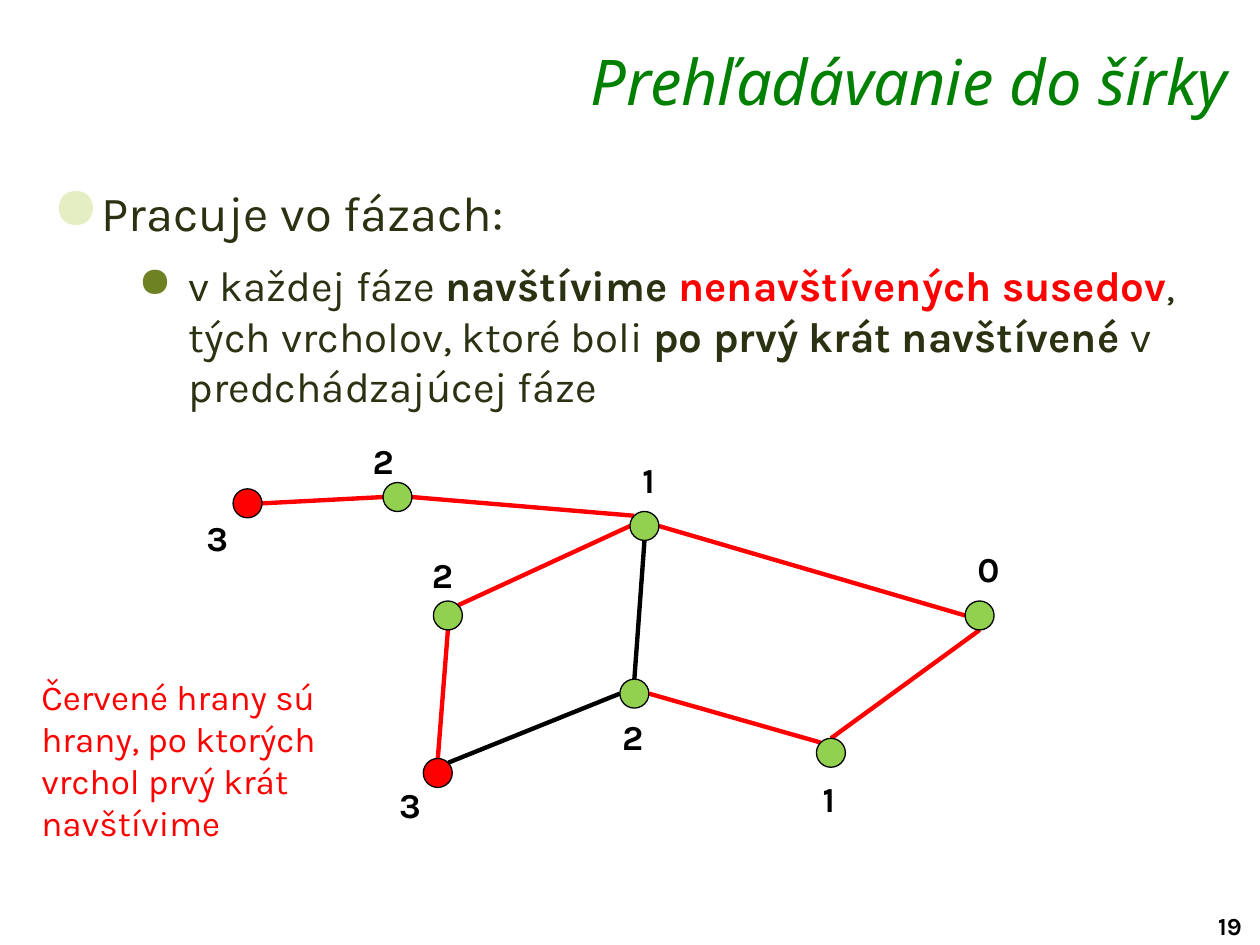
from math import sqrt

from lxml import etree
from pptx import Presentation
from pptx.dml.color import RGBColor
from pptx.enum.shapes import MSO_CONNECTOR, MSO_SHAPE
from pptx.enum.text import MSO_ANCHOR, MSO_AUTO_SIZE, PP_ALIGN
from pptx.oxml.ns import qn
from pptx.util import Inches, Pt

BLACK, RED, GREEN = "000000", "FF0000", "92D050"
TITLE_GREEN, OLIVE = "008000", "2B3212"
NODE = 0.23  # node diameter

# Unit offsets from a node's centre to a point on its rim
D = sqrt(0.5)
RIM = {"top": (0, -1), "bottom": (0, 1), "left": (-1, 0), "right": (1, 0),
       "top left": (-D, -D), "top right": (D, -D)}

# Node name: left, top, fill, label, label left, label top, label wraps
NODES = {
    "start": (7.66, 4.77, GREEN, "0", 7.66, 4.30, False),
    "hub": (5.00, 4.06, GREEN, "1", 5.00, 3.59, False),
    "south": (6.48, 5.86, GREEN, "1", 6.43, 6.12, True),
    "centre": (4.92, 5.39, GREEN, "2", 4.84, 5.63, True),
    "west": (3.44, 4.77, GREEN, "2", 3.33, 4.34, False),
    "north": (3.04, 3.83, GREEN, "2", 2.86, 3.44, False),
    "south west": (3.36, 6.02, RED, "3", 3.07, 6.17, False),
    "north west": (1.85, 3.88, RED, "3", 1.54, 4.05, False),
}

# From node, rim point, to node, rim point, colour
EDGES = [
    ("west", "top right", "hub", "left", RED),
    ("hub", "right", "start", "left", RED),
    ("centre", "top", "hub", "bottom", BLACK),
    ("south", "top", "start", "bottom", RED),
    ("centre", "right", "south", "top left", RED),
    ("south west", "top", "west", "bottom", RED),
    ("south west", "top right", "centre", "left", BLACK),
    ("north", "right", "hub", "top left", RED),
    ("north west", "right", "north", "left", RED),
]


def rgb(value):
    return RGBColor.from_string(value)


def add_run(p, text, size=20, color=BLACK, font="Karla", bold=False, italic=False):
    r = p.add_run()
    r.text = text
    r.font.name = font
    r.font.size = Pt(size)
    r.font.bold = bold
    r.font.italic = italic
    r.font.color.rgb = rgb(color)
    return r


def text_frame(slide, box, wrap=True, grow=True):
    tf = slide.shapes.add_textbox(*map(Inches, box)).text_frame
    tf.word_wrap = wrap
    tf.auto_size = MSO_AUTO_SIZE.SHAPE_TO_FIT_TEXT if grow else MSO_AUTO_SIZE.NONE
    tf.vertical_anchor = MSO_ANCHOR.TOP
    return tf


def add_text(slide, box, text, wrap=True, grow=True, align=PP_ALIGN.LEFT, **fmt):
    tf = text_frame(slide, box, wrap, grow)
    p = tf.paragraphs[0]
    p.alignment = align
    add_run(p, text, **fmt)
    return tf


def set_bullet(p, color, percent, margin, hanging):
    pPr = p._p.get_or_add_pPr()
    pPr.set("marL", str(Inches(margin)))
    pPr.set("indent", str(-Inches(hanging)))
    clr = etree.SubElement(pPr, qn("a:buClr"))
    etree.SubElement(clr, qn("a:srgbClr"), val=color)
    etree.SubElement(pPr, qn("a:buSzPct"), val=str(percent * 1000))
    etree.SubElement(pPr, qn("a:buChar"), char="●")


def add_title(slide, box):
    tf = add_text(slide, box, "Prehľadávanie do šírky", grow=False,
                  align=PP_ALIGN.RIGHT, size=36, color=TITLE_GREEN,
                  font="Noto Sans", italic=True)
    tf.margin_top = Inches(0.03)


def add_body(slide, box):
    tf = text_frame(slide, box, grow=False)
    p = tf.paragraphs[0]
    set_bullet(p, "E5EEC2", 120, 0.39, 0.39)
    p.space_after = Pt(5.6)
    add_run(p, "Pracuje vo fázach:", size=28, color=OLIVE)

    p = tf.add_paragraph()
    p.level = 1
    set_bullet(p, "6E8224", 100, 1.08, 0.4)
    p.space_before = p.space_after = Pt(4.8)
    for text, bold, color in [
        ("v každej fáze ", False, OLIVE),
        ("navštívime ", True, OLIVE),
        ("nenavštívených susedov", True, RED),
        (", tých vrcholov, ktoré boli ", False, OLIVE),
        ("po prvý krát navštívené ", True, OLIVE),
        ("v predchádzajúcej fáze", False, OLIVE),
    ]:
        add_run(p, text, size=24, color=color, bold=bold)


def add_edge(slide, start, end, color):
    line = slide.shapes.add_connector(MSO_CONNECTOR.STRAIGHT,
                                      *map(Inches, start + end))
    line.line.color.rgb = rgb(color)
    line.line.width = Pt(2.5)
    etree.SubElement(line._element.spPr, qn("a:effectLst"))


def add_graph(slide, box):
    left, top = box[:2]

    def rim_point(name, side):
        x, y = NODES[name][:2]
        dx, dy = RIM[side]
        return (left + x + NODE / 2 * (1 + dx), top + y + NODE / 2 * (1 + dy))

    # Edges
    for a, side_a, b, side_b, color in EDGES:
        add_edge(slide, rim_point(a, side_a), rim_point(b, side_b), color)

    # Nodes with the number of the phase that reaches them
    for x, y, fill, label, label_x, label_y, wrap in NODES.values():
        sp = slide.shapes.add_shape(MSO_SHAPE.OVAL, Inches(left + x),
                                    Inches(top + y), Inches(NODE), Inches(NODE))
        sp.shadow.inherit = False
        sp.fill.solid()
        sp.fill.fore_color.rgb = rgb(fill)
        sp.line.color.rgb = rgb(BLACK)
        sp.line.width = Pt(0.75)
        add_text(slide, (left + label_x, top + label_y, 0.37, 0.44), label,
                 wrap=wrap, bold=True)


def main():
    prs = Presentation()
    prs.slide_width, prs.slide_height = Inches(10), Inches(7.5)
    slide = prs.slides.add_slide(prs.slide_layouts[6])

    add_title(slide, (2.29, 0.31, 7.55, 0.58))
    add_body(slide, (0.32, 1.4, 9.38, 5.8))
    add_graph(slide, (0, 0, 10, 7.5))
    # Note on the red edges
    add_text(slide, (0.23, 5.31, 2.81, 1.72),
             "Červené hrany sú hrany, po ktorých vrchol prvý krát navštívime",
             color=RED)
    # Page number
    add_text(slide, (9.57, 7.18, 0.51, 0.33), "19", size=14, bold=True)

    prs.save("out.pptx")


if __name__ == "__main__":
    main()
